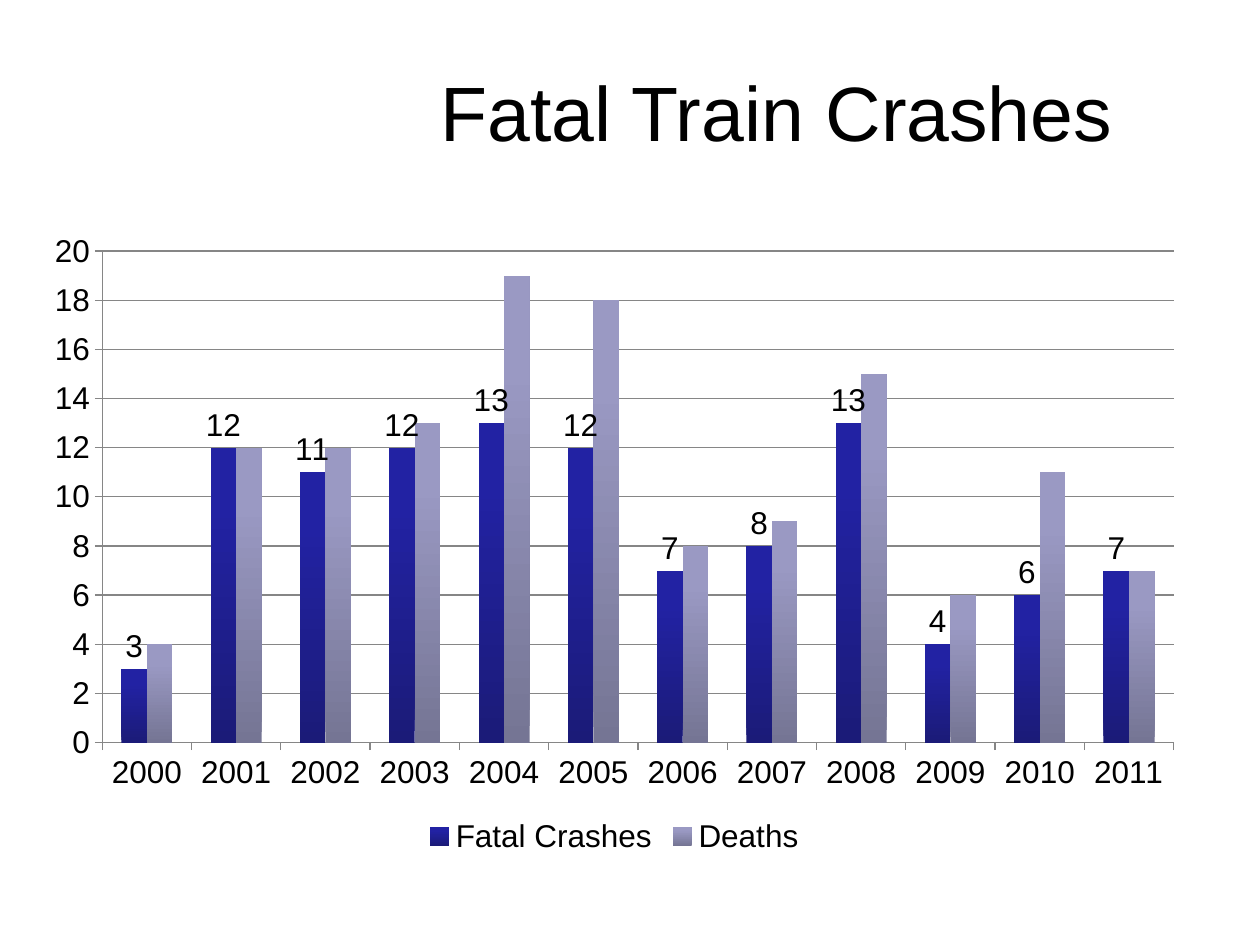
from dataclasses import dataclass

from pptx import Presentation
from pptx import util as u
from pptx.chart.data import CategoryChartData
from pptx.dml.color import RGBColor
from pptx.enum import chart as c
from pptx.enum import text as t


@dataclass(frozen=True)
class Theme:
    font: str = "Arial"
    ink: str = "000000"
    grid: str = "868686"
    title_size: int = 44
    chart_size: int = 18


@dataclass(frozen=True)
class Series:
    name: str
    values: tuple[int, ...]
    bottom_color: str
    top_color: str
    labelled: bool = False


THEME = Theme()
YEARS = [str(year) for year in range(2000, 2012)]
SERIES = (
    Series("Fatal Crashes", (3, 12, 11, 12, 13, 12, 7, 8, 13, 4, 6, 7),
           "1B1B78", "2222A3", labelled=True),
    Series("Deaths", (4, 12, 12, 13, 19, 18, 8, 9, 15, 6, 11, 7),
           "757594", "9A99C3"),
)


def format_font(font, size: int, color: str = THEME.ink) -> None:
    font.name = THEME.font
    font.size = u.Pt(size)
    font.bold = False
    font.color.rgb = RGBColor.from_string(color)


def write_text(shape, content: str, *, size: int, align, anchor) -> None:
    frame = shape.text_frame
    frame.word_wrap = True
    frame.vertical_anchor = anchor
    paragraph = frame.paragraphs[0]
    paragraph.alignment = align
    run = paragraph.add_run()
    run.text = content
    format_font(run.font, size)


def format_line(line) -> None:
    line.color.rgb = RGBColor.from_string(THEME.grid)
    line.width = u.Pt(0.75)


def format_axis(axis) -> None:
    axis.major_tick_mark = c.XL_TICK_MARK.OUTSIDE
    axis.minor_tick_mark = c.XL_TICK_MARK.NONE
    format_line(axis.format.line)


def format_series(plot_series, series: Series) -> None:
    """Shade the columns from bottom to top and label them if asked."""
    fill = plot_series.format.fill
    fill.gradient()
    fill.gradient_angle = 90
    stops = zip(fill.gradient_stops, (0, 0.8), (series.bottom_color, series.top_color))
    for stop, position, color in stops:
        stop.position = position
        stop.color.rgb = RGBColor.from_string(color)
    plot_series.format.line.fill.background()
    plot_series.invert_if_negative = False
    if series.labelled:
        labels = plot_series.data_labels
        labels.show_value = True
        labels.position = c.XL_LABEL_POSITION.OUTSIDE_END
        format_font(labels.font, THEME.chart_size)


def add_crash_chart(slide) -> None:
    data = CategoryChartData()
    data.categories = YEARS
    for series in SERIES:
        data.add_series(series.name, series.values)
    chart = slide.shapes.add_chart(
        c.XL_CHART_TYPE.COLUMN_CLUSTERED,
        u.Inches(0.25), u.Inches(1.75), u.Inches(9.25), u.Inches(5.08), data,
    ).chart
    format_font(chart.font, THEME.chart_size)
    chart.has_title = False
    chart.has_legend = True
    chart.legend.position = c.XL_LEGEND_POSITION.BOTTOM
    chart.legend.include_in_layout = False

    plot = chart.plots[0]
    plot.gap_width = 150
    plot.overlap = 0
    plot.vary_by_categories = False
    for plot_series, series in zip(plot.series, SERIES):
        format_series(plot_series, series)

    format_axis(chart.category_axis)
    value_axis = chart.value_axis
    format_axis(value_axis)
    value_axis.minimum_scale = 0
    value_axis.maximum_scale = 20
    value_axis.major_unit = 2
    value_axis.has_major_gridlines = True
    format_line(value_axis.major_gridlines.format.line)


def main() -> None:
    presentation = Presentation()
    presentation.slide_width = u.Inches(10)
    presentation.slide_height = u.Inches(7.5)
    slide = presentation.slides.add_slide(presentation.slide_layouts[5])

    title = slide.shapes.title
    title.left, title.top = u.Inches(2.75), u.Inches(0.25)
    title.width, title.height = u.Inches(6.83), u.Inches(1.25)
    write_text(title, "Fatal Train Crashes", size=THEME.title_size,
               align=t.PP_ALIGN.CENTER, anchor=t.MSO_ANCHOR.MIDDLE)
    add_crash_chart(slide)
    presentation.save("out.pptx")


if __name__ == "__main__":
    main()
